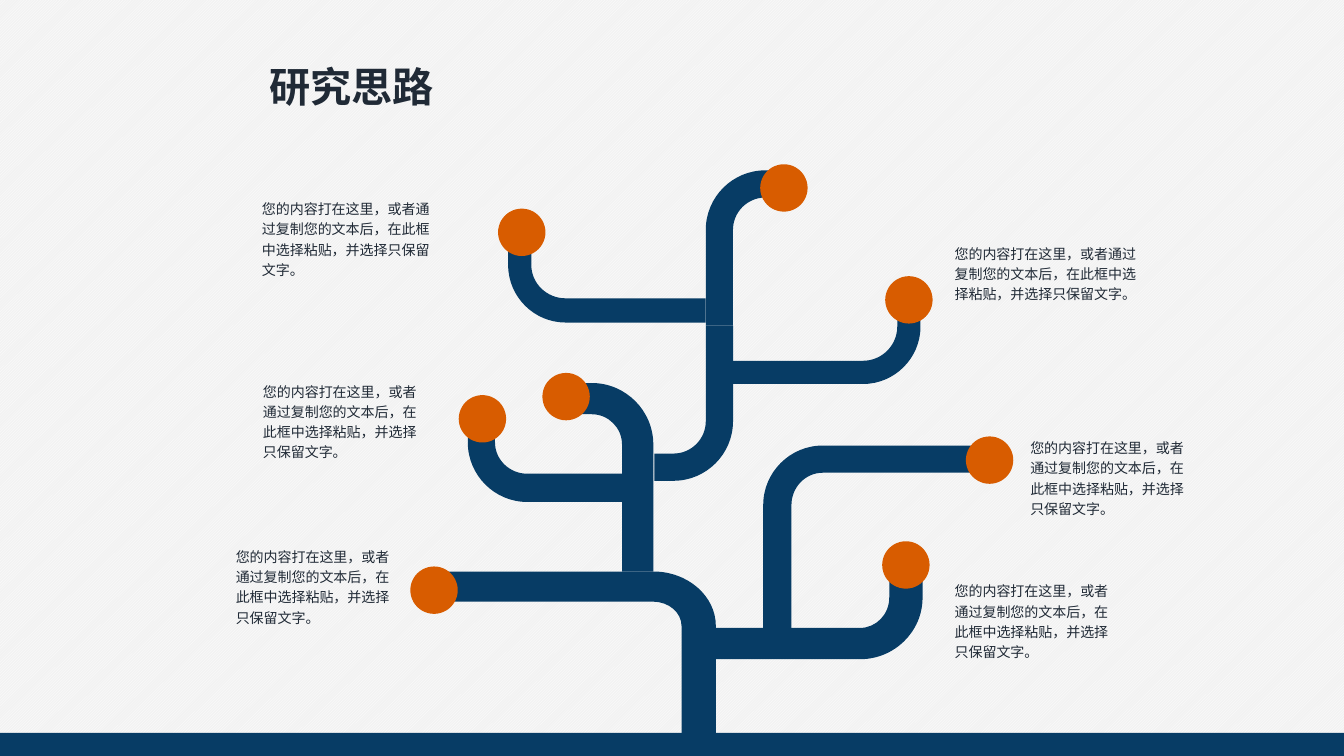
from pptx import Presentation
from pptx import util as u
from pptx.dml.color import RGBColor
from pptx.enum import dml, shapes, text
from pptx.oxml.ns import qn

NAVY = RGBColor(0x07, 0x3C, 0x65)
ORANGE = RGBColor(0xD8, 0x5C, 0x00)
INK = RGBColor(0x20, 0x2A, 0x36)
WHITE = RGBColor(0xFF, 0xFF, 0xFF)
PALE = RGBColor(0xF2, 0xF2, 0xF2)

TITLE = "研究思路"
NOTE = "您的内容打在这里，或者通过复制您的文本后，在此框中选择粘贴，并选择只保留文字。"

# Bend centre, outer edge (x, y), inner edge (x, y), open ends (x, y)
BRANCHES = [
    ((6.48, 6.21), (7.10, 5.67), (6.76, 5.97), (4.30, 7.50)),
    ((8.53, 5.93), (9.15, 6.54), (8.82, 6.23), (7.10, 5.74)),
    ((8.56, 3.24), (9.13, 3.81), (8.90, 3.58), (7.27, 3.05)),
    ((5.87, 4.41), (6.48, 3.80), (6.17, 4.11), (5.68, 5.67)),
    ((8.16, 5.01), (7.57, 4.42), (7.85, 4.69), (9.83, 6.23)),
    ((5.61, 2.63), (5.04, 3.20), (5.27, 2.96), (7.00, 2.43)),
    ((5.23, 4.39), (4.64, 4.98), (4.91, 4.70), (6.17, 4.20)),
    ((6.68, 4.18), (7.27, 4.77), (7.00, 4.50), (6.49, 3.23)),
    ((7.59, 2.28), (7.00, 1.69), (7.27, 1.96), (7.78, 3.23)),
]
FRUIT_SIZE = 0.47
FRUITS = [(4.07, 5.62), (4.55, 3.92), (9.58, 4.33), (8.78, 2.74), (4.94, 2.07),
          (7.54, 1.63), (8.75, 5.37), (5.38, 3.70)]
NOTES = [  # left, top, width, height
    (2.24, 5.36, 1.82, 0.91),
    (2.51, 3.72, 1.82, 0.91),
    (10.12, 4.28, 1.78, 0.91),
    (9.37, 2.35, 2.13, 0.71),
    (2.50, 1.91, 1.99, 0.91),
    (9.37, 5.70, 1.78, 0.91),
]
ROUNDNESS = 0.55  # Bezier handle length for a quarter circle


def inches(*values):
    return [u.Inches(value) for value in values]


def paint(shape, color):
    shape.shadow.inherit = False
    shape.fill.solid()
    shape.fill.fore_color.rgb = color
    shape.line.fill.background()


def round_off(segment, previous, leaves_sideways):
    """Turn a straight segment into a quarter curve."""
    start, end = [(int(pt.get("x")), int(pt.get("y")))
                  for pt in (previous[0], segment[0])]
    corner = (end[0], start[1]) if leaves_sideways else (start[0], end[1])
    curve = segment.makeelement(qn("a:cubicBezTo"), {})
    for anchor in (start, end):
        x, y = [round(a + ROUNDNESS * (c - a)) for a, c in zip(anchor, corner)]
        curve.append(curve.makeelement(qn("a:pt"), {"x": str(x), "y": str(y)}))
    curve.append(segment[0])
    segment.getparent().replace(segment, curve)


def add_branch(slide, centre, outer, inner, ends):
    (cx, cy), (end_x, end_y) = centre, ends
    outline = [(end_x, outer[1]), (cx, outer[1]), (outer[0], cy), (outer[0], end_y),
               (inner[0], end_y), (inner[0], cy), (cx, inner[1]), (end_x, inner[1])]
    points = [inches(*point) for point in outline]
    builder = slide.shapes.build_freeform(*points[0], scale=1.0)
    builder.add_line_segments(points[1:], close=True)
    branch = builder.convert_to_shape()
    lines = list(branch._element.iter(qn("a:lnTo")))
    round_off(lines[1], lines[0], leaves_sideways=True)
    round_off(lines[5], lines[4], leaves_sideways=False)
    paint(branch, NAVY)


def write(box, words, size, font, bold=False):
    frame = box.text_frame
    frame.text = words
    frame.vertical_anchor = text.MSO_ANCHOR.TOP
    frame.auto_size = text.MSO_AUTO_SIZE.SHAPE_TO_FIT_TEXT
    para = frame.paragraphs[0]
    para.alignment = text.PP_ALIGN.LEFT
    span = para.runs[0]
    span.font.size = u.Pt(size)
    span.font.bold = bold
    span.font.color.rgb = INK
    span.font.name = font
    east_asian = span.font._element.makeelement(qn("a:ea"), {"typeface": font})
    span.font._element.find(qn("a:latin")).addnext(east_asian)
    return frame


def main():
    deck = Presentation()
    deck.slide_width, deck.slide_height = inches(13.33, 7.5)
    slide = deck.slides.add_slide(deck.slide_layouts[5])
    backdrop = slide.background.fill
    backdrop.patterned()
    backdrop.pattern = dml.MSO_PATTERN.LIGHT_UPWARD_DIAGONAL
    backdrop.fore_color.rgb = WHITE
    backdrop.back_color.rgb = PALE

    title = slide.shapes.title
    title.left, title.top, title.width, title.height = inches(2.57, 0.56, 1.85, 0.59)
    write(title, TITLE, 29.4, "Arial", bold=True).word_wrap = False

    for branch in BRANCHES:
        add_branch(slide, *branch)
    for left, top in FRUITS:
        fruit = slide.shapes.add_shape(shapes.MSO_SHAPE.OVAL,
                                       *inches(left, top, FRUIT_SIZE, FRUIT_SIZE))
        paint(fruit, ORANGE)
    for place in NOTES:
        frame = write(slide.shapes.add_textbox(*inches(*place)),
                      NOTE, 10, "Noto Sans CJK SC")
        frame.word_wrap = True
        frame.paragraphs[0].line_spacing = 1.2
    ground = slide.shapes.add_shape(shapes.MSO_SHAPE.RECTANGLE,
                                    *inches(0, 7.27, 13.33, 0.23))
    paint(ground, NAVY)

    deck.save("out.pptx")


if __name__ == "__main__":
    main()
